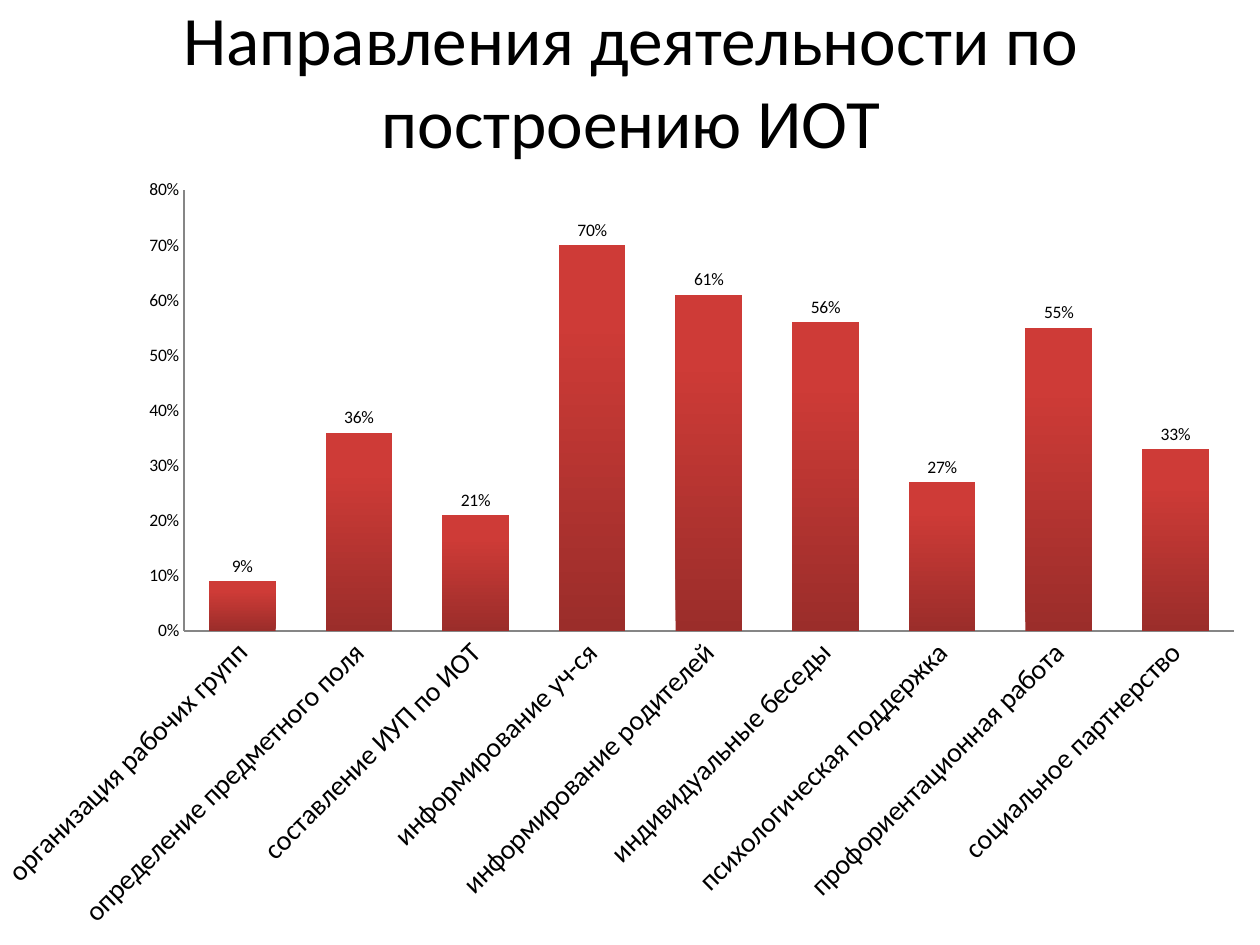
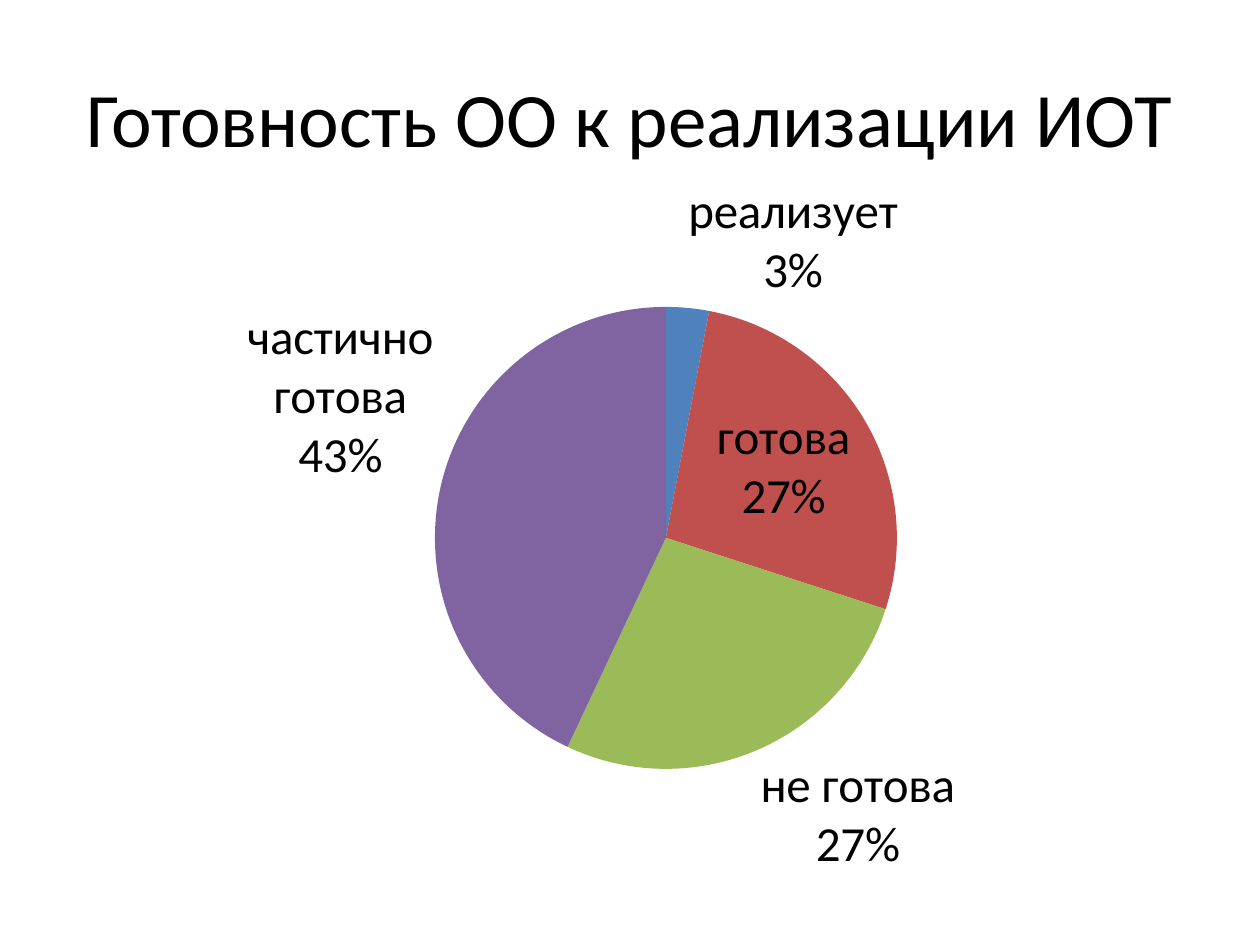
from pptx import Presentation
from pptx.chart.data import CategoryChartData as ChartData
from pptx.dml.color import RGBColor
from pptx.enum.chart import XL_CHART_TYPE as Kind, XL_LABEL_POSITION as Spot
from pptx.enum.chart import XL_TICK_MARK as Tick
from pptx.enum.text import MSO_ANCHOR as Anchor, PP_ALIGN as Align
from pptx.oxml import parse_xml
from pptx.oxml.ns import nsdecls, qn
from pptx.util import Emu, Pt

FONT = "Calibri"
INK = "000000"
AXIS = "868686"
BAR_LOW, BAR_TOP = "9B2D2A", "CE3B37"
SLICES = ["4F81BD", "C0504D", "9BBB59", "8064A2"]

WORK = [
    ("организация рабочих групп", 0.09),
    ("определение предметного поля", 0.36),
    ("составление ИУП по ИОТ", 0.21),
    ("информирование уч-ся", 0.7),
    ("информирование родителей", 0.61),
    ("индивидуальные беседы", 0.56),
    ("психологическая поддержка", 0.27),
    ("профориентационная работа", 0.55),
    ("социальное партнерство", 0.33),
]
READY = [("реализует", 3), ("готова", 27), ("не готова", 27),
         ("частично готова", 43)]


def px(count):
    return Emu(round(count * 914400 / 126))


def color(code):
    return RGBColor.from_string(code)


def style(font, size):
    font.name = FONT
    font.size = Pt(size)
    font.color.rgb = color(INK)


def add_title(slide, box, text, size):
    frame = slide.shapes.add_textbox(*map(px, box)).text_frame
    frame.word_wrap = True
    frame.vertical_anchor = Anchor.MIDDLE
    line = frame.paragraphs[0]
    line.text = text
    line.alignment = Align.CENTER
    style(line.runs[0].font, size)


def fix_plot(chart, box, inner):
    """Pin the inner plot area; inner is in px from the chart's corner."""
    wide, high = box[2:]
    parts = zip("xywh", inner, (wide, high, wide, high))
    sizes = "".join(f'<c:{key} val="{part / whole:.4f}"/>'
                    for key, part, whole in parts)
    area = chart._chartSpace.chart.plotArea
    for old in area.findall(qn("c:layout")):
        area.remove(old)
    area.insert(0, parse_xml(
        f'<c:layout {nsdecls("c")}><c:manualLayout>'
        '<c:layoutTarget val="inner"/><c:xMode val="edge"/>'
        f'<c:yMode val="edge"/>{sizes}</c:manualLayout></c:layout>'))


def add_chart(slide, kind, box, inner, rows):
    data = ChartData()
    data.categories = [name for name, _ in rows]
    data.add_series("Series 1", [value for _, value in rows])
    chart = slide.shapes.add_chart(kind, *map(px, box), data).chart
    chart.has_title = False
    chart.has_legend = False
    style(chart.font, 10)
    fix_plot(chart, box, inner)
    return chart


def add_labels(plot, size, spot):
    plot.has_data_labels = True
    labels = plot.data_labels
    style(labels.font, size)
    labels.number_format = "0%"
    labels.number_format_is_linked = False
    labels.position = spot
    return labels


def style_axis(axis, size):
    axis.has_major_gridlines = False
    axis.major_tick_mark = axis.minor_tick_mark = Tick.NONE
    axis.format.line.color.rgb = color(AXIS)
    axis.format.line.width = Pt(0.75)
    style(axis.tick_labels.font, size)


def add_bars(slide, box):
    chart = add_chart(slide, Kind.COLUMN_CLUSTERED, box,
                      (209, 25, 1050, 441), WORK)
    style_axis(chart.category_axis, 16)
    turn = chart.category_axis._element.find(qn("c:txPr"))
    turn.find(qn("a:bodyPr")).set("rot", "-2700000")

    scale = chart.value_axis
    style_axis(scale, 10)
    scale.minimum_scale, scale.maximum_scale = 0, 0.8
    scale.major_unit = 0.1
    scale.tick_labels.number_format = "0%"
    scale.tick_labels.number_format_is_linked = False

    plot = chart.plots[0]
    plot.gap_width = 75
    plot.vary_by_categories = False
    add_labels(plot, 10, Spot.OUTSIDE_END).show_value = True
    fill = plot.series[0].format.fill
    fill.gradient()
    fill.gradient_angle = 90
    for stop, code, place in zip(fill.gradient_stops, (BAR_LOW, BAR_TOP),
                                 (0, 0.8)):
        stop.color.rgb = color(code)
        stop.position = place


def add_pie(slide, box):
    chart = add_chart(slide, Kind.PIE, box, (372, 142, 462, 462), READY)
    plot = chart.plots[0]
    plot.vary_by_categories = True
    for index, code in enumerate(SLICES):
        fill = plot.series[0].points[index].format.fill
        fill.solid()
        fill.fore_color.rgb = color(code)

    labels = add_labels(plot, 28, Spot.BEST_FIT)
    labels.show_value = False
    labels.show_category_name = True
    labels.show_percentage = True
    labels._element.find(qn("c:showBubbleSize")).addnext(
        parse_xml(f'<c:separator {nsdecls("c")}>\n</c:separator>'))


def main():
    deck = Presentation()
    deck.slide_width, deck.slide_height = px(1260), px(945)
    blank = deck.slide_layouts[6]

    work = deck.slides.add_slide(blank)
    add_title(work, (64, 0, 1134, 158),
              "Направления деятельности по построению ИОТ", 39.6)
    add_bars(work, (-25, 165, 1285, 780))

    ready = deck.slides.add_slide(blank)
    add_title(ready, (63, 38, 1134, 158),
              "Готовность ОО к реализации ИОТ", 44)
    add_pie(ready, (63, 165, 1134, 735))

    deck.save("out.pptx")


if __name__ == "__main__":
    main()
